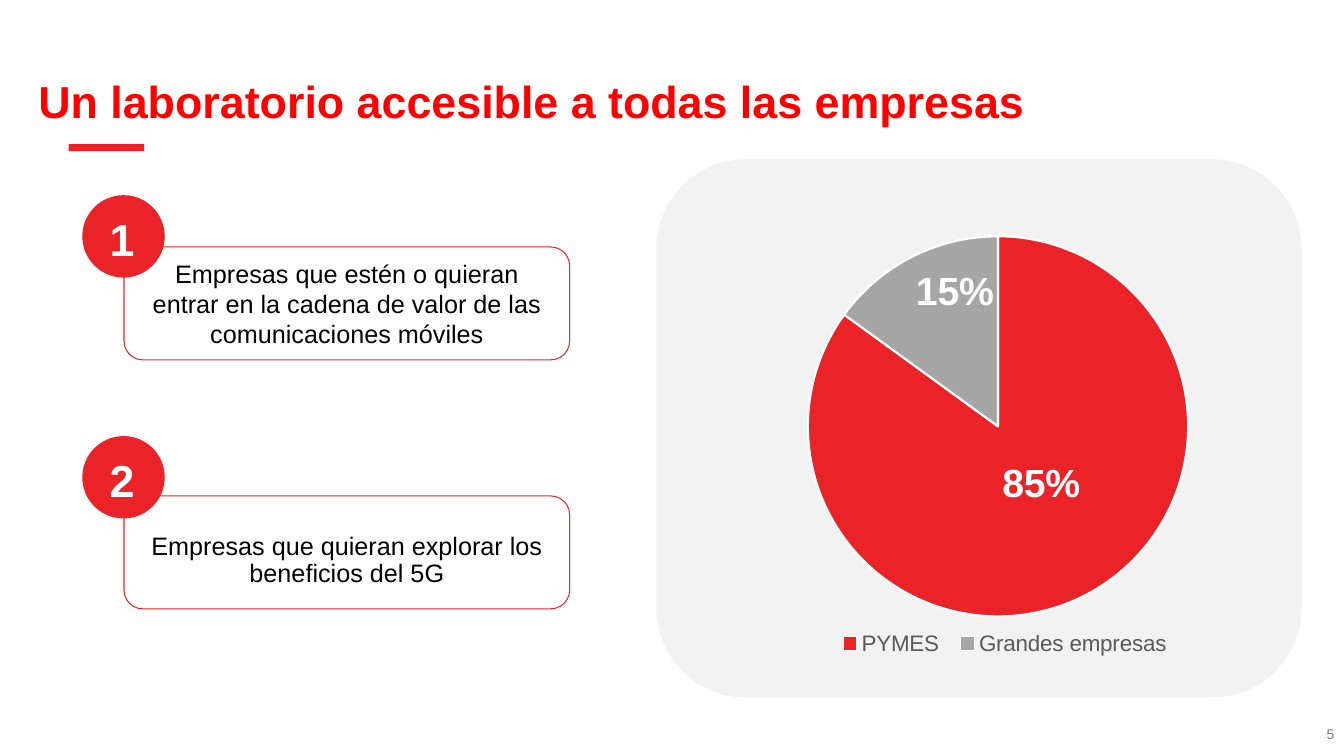
from lxml import etree
from pptx import Presentation
from pptx.chart.data import CategoryChartData
from pptx.dml.color import RGBColor
from pptx.enum.chart import (XL_CHART_TYPE as CHART, XL_LABEL_POSITION as LABEL,
                             XL_LEGEND_POSITION as LEGEND)
from pptx.enum.shapes import MSO_SHAPE as SHAPE
from pptx.enum.text import MSO_ANCHOR as ANCHOR, PP_ALIGN as ALIGN
from pptx.oxml import parse_xml
from pptx.oxml.ns import nsdecls, qn
from pptx.util import Inches, Pt

TITLE = "Un laboratorio accesible a todas las empresas"
# text, callout top, circle top, line spacing, top inset
CALLOUTS = [
    ("Empresas que estén o quieran entrar en la cadena de valor de las "
     "comunicaciones móviles", 2.45, 1.95, 1.0, 0.05),
    ("Empresas que quieran explorar los beneficios del 5G", 4.92, 4.34, 0.9, 0.22),
]
# category, share, colour, vertical label shift as a share of the chart
SLICES = [
    ("PYMES", 0.85, "EA2328", -0.06),
    ("Grandes empresas", 0.15, "A6A6A6", -0.11),
]
PAGE = "5"
FONT, RED, WHITE = "Arial", "EA2328", "FFFFFF"
# shares of the chart's size
PLOT = {"x": 0.27, "y": 0.05, "w": 0.56, "h": 0.84}
KEY = {"x": 0.31, "y": 0.91, "w": 0.5, "h": 0.08}


def rgb(value):
    return RGBColor.from_string(value)


def set_font(font, size, color, bold=False):
    font.name, font.size, font.bold = FONT, Pt(size), bold
    font.color.rgb = rgb(color)


def write(s, text, size, color, bold=False, align=ALIGN.LEFT, spacing=1.0):
    tf = s.text_frame
    tf.word_wrap = True
    p = tf.paragraphs[0]
    p.text, p.alignment, p.line_spacing = text, align, spacing
    set_font(p.font, size, color, bold)
    return tf


def add_shape(shapes, kind, box, fill=None, line=None, width=0.75):
    s = shapes.add_shape(kind, *map(Inches, box))
    s.shadow.inherit = False
    if fill:
        s.fill.solid()
        s.fill.fore_color.rgb = rgb(fill)
    else:
        s.fill.background()
    if line:
        s.line.color.rgb = rgb(line)
        s.line.width = Pt(width)
    else:
        s.line.fill.background()
    return s


def place(parent, index, **places):
    """Give a chart part a manual layout; places come in schema order."""
    for old in parent.findall(qn("c:layout")):
        parent.remove(old)
    layout = parse_xml(f"<c:layout {nsdecls('c')}><c:manualLayout/></c:layout>")
    for tag, value in places.items():
        etree.SubElement(layout[0], qn(f"c:{tag}")).set("val", str(value))
    parent.insert(index, layout)


def add_callout(shapes, number, text, top, circle_top, spacing, inset):
    group = shapes.add_group_shape().shapes
    s = add_shape(group, SHAPE.ROUNDED_RECTANGLE, (1.23, top, 4.42, 1.12), line=RED)
    tf = write(s, text, 18, "000000", align=ALIGN.CENTER, spacing=spacing)
    tf.vertical_anchor = ANCHOR.MIDDLE
    tf.margin_top = Inches(inset)
    add_shape(group, SHAPE.OVAL, (0.83, circle_top, 0.79, 0.79), RED, RED, 2)
    label = group.add_textbox(*map(Inches, (0.99, circle_top + 0.1, 0.44, 0.64)))
    write(label, str(number), 32, WHITE, True, ALIGN.CENTER)


def add_pie(shapes):
    data = CategoryChartData(number_format="0%")
    names, shares, colors, shifts = zip(*SLICES)
    data.categories = names
    data.add_series("Series 1", shares)
    box = map(Inches, (6.06, 2.12, 6.98, 4.49))
    chart = shapes.add_chart(CHART.PIE, *box, data).chart
    chart.has_title = False
    set_font(chart.font, 10, "000000")
    chart.has_legend = True
    legend = chart.legend
    legend.position = LEGEND.BOTTOM
    legend.include_in_layout = False
    set_font(legend.font, 16, "595959")
    place(legend._element, 1, xMode="edge", yMode="edge", **KEY)

    plot = chart.plots[0]
    plot.vary_by_categories = True
    place(chart._chartSpace.chart.plotArea, 0, layoutTarget="inner",
          xMode="edge", yMode="edge", **PLOT)

    series = plot.series[0]
    labels = series.data_labels
    labels.show_value = True
    labels.position = LABEL.CENTER
    labels.number_format, labels.number_format_is_linked = "0%", False
    set_font(labels.font, 28, WHITE, True)
    for leader in labels._element.findall(qn("c:showLeaderLines")):
        leader.set("val", "0")
    for i, (color, shift) in enumerate(zip(colors, shifts)):
        point = series.points[i]
        point.format.fill.solid()
        point.format.fill.fore_color.rgb = rgb(color)
        point.format.line.color.rgb = rgb(WHITE)
        point.format.line.width = Pt(1.5)
        set_font(point.data_label.font, 28, WHITE, True)
        point.data_label.position = LABEL.CENTER
        place(labels._element.findall(qn("c:dLbl"))[i], 1, x=0, y=shift)


def main():
    prs = Presentation()
    prs.slide_width, prs.slide_height = Inches(13.33), Inches(7.5)
    slide = prs.slides.add_slide(prs.slide_layouts[5])
    shapes = slide.shapes

    title = shapes.title
    title.left, title.top, title.width, title.height = map(
        Inches, (0.33, 0.4, 12.82, 0.89))
    tf = write(title, TITLE, 32, "FF0000", True, spacing=0.9)
    tf.vertical_anchor = ANCHOR.BOTTOM
    tf.margin_left = tf.margin_right = Inches(0.05)
    tf.margin_top = tf.margin_bottom = Inches(0.02)

    add_shape(shapes, SHAPE.RECTANGLE, (0.68, 1.43, 0.75, 0.07), "EC2226")
    add_shape(shapes, SHAPE.ROUNDED_RECTANGLE, (6.51, 1.58, 6.4, 5.34), "F2F2F2")
    add_pie(shapes)
    for number, callout in enumerate(CALLOUTS, 1):
        add_callout(shapes, number, *callout)
    page = shapes.add_textbox(*map(Inches, (13.06, 7.15, 0.27, 0.27)))
    write(page, PAGE, 10, "797979")
    prs.save("out.pptx")


if __name__ == "__main__":
    main()
